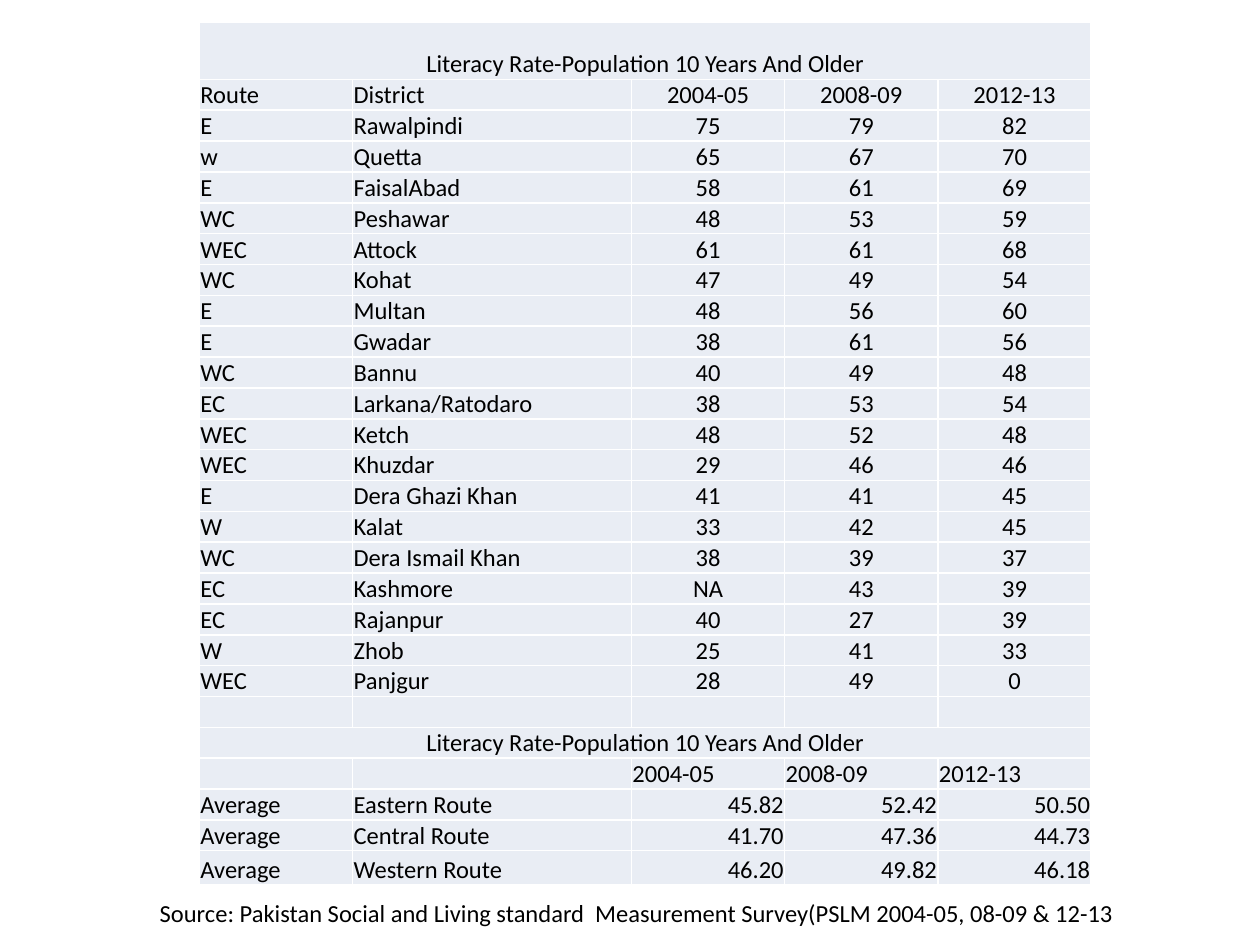
import dataclasses

import pptx
import pptx.dml.color
import pptx.enum.text
import pptx.oxml
import pptx.oxml.ns
import pptx.util
from pptx.util import Cm

ALIGN = pptx.enum.text.PP_ALIGN


@dataclasses.dataclass(frozen=True)
class Theme:
    font: str = "Calibri"
    size: int = 14
    text: str = "000000"
    cell: str = "E9EDF4"
    border: str = "FFFFFF"
    border_width: int = 1


THEME = Theme()
TITLE = "Literacy Rate-Population 10 Years And Older"
YEARS = ("2004-05", "2008-09", "2012-13")
DISTRICTS = [
    ("E", "Rawalpindi", "75", "79", "82"),
    ("w", "Quetta", "65", "67", "70"),
    ("E", "FaisalAbad", "58", "61", "69"),
    ("WC", "Peshawar", "48", "53", "59"),
    ("WEC", "Attock", "61", "61", "68"),
    ("WC", "Kohat", "47", "49", "54"),
    ("E", "Multan", "48", "56", "60"),
    ("E", "Gwadar", "38", "61", "56"),
    ("WC", "Bannu", "40", "49", "48"),
    ("EC", "Larkana/Ratodaro", "38", "53", "54"),
    ("WEC", "Ketch", "48", "52", "48"),
    ("WEC", "Khuzdar", "29", "46", "46"),
    ("E", "Dera Ghazi Khan", "41", "41", "45"),
    ("W", "Kalat", "33", "42", "45"),
    ("WC", "Dera Ismail Khan", "38", "39", "37"),
    ("EC", "Kashmore", "NA", "43", "39"),
    ("EC", "Rajanpur", "40", "27", "39"),
    ("W", "Zhob", "25", "41", "33"),
    ("WEC", "Panjgur", "28", "49", "0"),
]
AVERAGES = [
    ("Average", "Eastern Route", "45.82", "52.42", "50.50"),
    ("Average", "Central Route", "41.70", "47.36", "44.73"),
    ("Average", "Western Route", "46.20", "49.82", "46.18"),
]
BLANK = ("",) * 5
TITLE_ROW = (TITLE,) + ("",) * 4

# Each row: its cells and the alignment of its three value columns.
ROWS = (
    [(TITLE_ROW, ALIGN.CENTER), (("Route", "District") + YEARS, ALIGN.CENTER)]
    + [(row, ALIGN.CENTER) for row in DISTRICTS]
    + [(BLANK, ALIGN.LEFT), (TITLE_ROW, ALIGN.CENTER), (("", "") + YEARS, ALIGN.LEFT)]
    + [(row, ALIGN.RIGHT) for row in AVERAGES]
)
COLUMN_SHARES = (1.22, 2.22, 1.22, 1.22, 1.22)
FIRST_ROW, ROW, LAST_ROW = Cm(1.16), Cm(0.59), Cm(0.69)


def write(tf, text, size=THEME.size, color=THEME.text, align=ALIGN.LEFT):
    p = tf.paragraphs[0]
    p.alignment = align
    if not text:
        # An empty cell keeps its row low only if its end mark has the text size.
        end = pptx.oxml.parse_xml(
            f'<a:endParaRPr {pptx.oxml.ns.nsdecls("a")} sz="{size * 100}"/>')
        p._p.append(end)
        return
    r = p.add_run()
    r.text = text
    r.font.name = THEME.font
    r.font.size = pptx.util.Pt(size)
    r.font.color.rgb = pptx.dml.color.RGBColor.from_string(color)


def style_cell(cell):
    cell.margin_left = cell.margin_right = cell.margin_top = Cm(0.02)
    cell.margin_bottom = 0
    cell.vertical_anchor = pptx.enum.text.MSO_ANCHOR.BOTTOM
    tc_pr = cell._tc.get_or_add_tcPr()
    for side in ("lnL", "lnR", "lnT", "lnB"):
        tc_pr.append(pptx.oxml.parse_xml(
            f'<a:{side} {pptx.oxml.ns.nsdecls("a")}'
            f' w="{pptx.util.Pt(THEME.border_width)}">'
            f'<a:solidFill><a:srgbClr val="{THEME.border}"/></a:solidFill></a:{side}>'))
    cell.fill.solid()
    cell.fill.fore_color.rgb = pptx.dml.color.RGBColor.from_string(THEME.cell)


def add_literacy_table(s, left, top, width, height):
    frame = s.shapes.add_table(len(ROWS), len(COLUMN_SHARES), left, top, width, height)
    table = frame.table
    table.first_row = table.horz_banding = False
    for column, share in zip(table.columns, COLUMN_SHARES):
        column.width = int(width * share / sum(COLUMN_SHARES))
    heights = [FIRST_ROW] + [ROW] * (len(ROWS) - 2) + [LAST_ROW]
    for i, (values, value_align) in enumerate(ROWS):
        table.rows[i].height = heights[i]
        is_title = values == TITLE_ROW
        for j, text in enumerate(values):
            cell = table.cell(i, j)
            style_cell(cell)
            align = value_align if is_title or j > 1 else ALIGN.LEFT
            write(cell.text_frame, text, align=align)
        if is_title:
            table.cell(i, 0).merge(table.cell(i, len(values) - 1))
    frame.height = height


def add_source_line(s, left, top, width, height):
    tf = s.shapes.add_textbox(left, top, width, height).text_frame
    tf.word_wrap = False
    tf.auto_size = pptx.enum.text.MSO_AUTO_SIZE.SHAPE_TO_FIT_TEXT
    write(tf, "Source: Pakistan Social and Living standard  Measurement Survey"
              "(PSLM 2004-05, 08-09 & 12-13")


def main():
    prs = pptx.Presentation()
    prs.slide_width, prs.slide_height = Cm(25.4), Cm(19.05)
    s = prs.slides.add_slide(prs.slide_layouts[6])
    add_literacy_table(s, Cm(4.02), Cm(0.44), Cm(17.98), Cm(17.25))
    add_source_line(s, Cm(2.97), Cm(17.98), Cm(19.91), Cm(0.86))
    prs.save("out.pptx")


if __name__ == "__main__":
    main()
